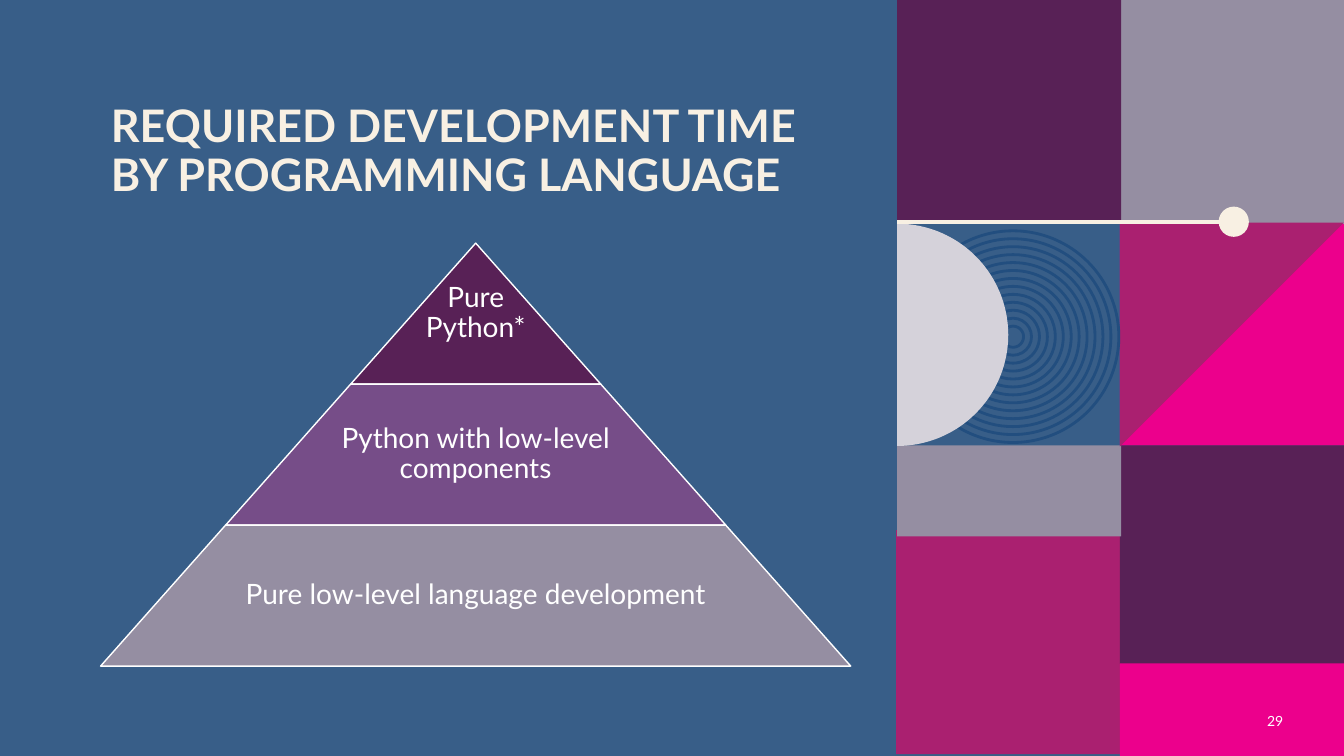
"""Build the slide on required development time by programming language."""
from math import cos, pi, sin

from lxml.etree import SubElement
from pptx import Presentation
from pptx.dml.color import RGBColor
from pptx.enum.shapes import MSO_CONNECTOR, MSO_SHAPE
from pptx.enum.text import MSO_ANCHOR, MSO_AUTO_SIZE, PP_ALIGN
from pptx.oxml.ns import qn
from pptx.util import Pt

BLUE = RGBColor(0x38, 0x5E, 0x88)
DEEP_BLUE = RGBColor(0x22, 0x4E, 0x7F)
PLUM = RGBColor(0x58, 0x21, 0x56)
VIOLET = RGBColor(0x76, 0x4D, 0x88)
MAUVE = RGBColor(0x95, 0x8E, 0xA2)
PALE = RGBColor(0xD5, 0xD2, 0xDA)
BERRY = RGBColor(0xAA, 0x20, 0x70)
PINK = RGBColor(0xEC, 0x00, 0x8C)
CREAM = RGBColor(0xF8, 0xF0, 0xE3)
WHITE = RGBColor(0xFF, 0xFF, 0xFF)
FONT = "Lato"

TITLE = "REQUIRED DEVELOPMENT TIME BY PROGRAMMING LANGUAGE"
PAGE = "29"
LEVELS = [
    ("Pure\nPython*", PLUM, 178.6),
    ("Python with low-level components", VIOLET, 232),
    ("Pure low-level language development", MAUVE, 348),
]
TILES = [
    (800, 158.4, 160, PINK),
    (800, 0, 160, MAUVE),
    (640.8, -0.5, 160, PLUM),
    (640.1, 378.7, 160, BERRY),
    (800, 318.2, 156, PLUM),
    (800, 473.8, 66.2, PINK),
    (640.8, 318.2, 65, MAUVE),
]
TILE_W = 160
APEX_X, APEX_Y, LEVEL_W, LEVEL_H = 339.8, 173.7, 178.6, 100.7
RING_X, RING_Y, RING_D, RING_STEP, RINGS = 723.6, 240.5, 151.2, 11.34, 13
DISC_X, DISC_Y, DISC_R, DISC_STEPS = 640.8, 239.2, 79.4, 90
RULE_Y, RULE_END, DOT_D = 158.4, 881.3, 21.6


def paint(sp, fill=None, line=None, width=1):
    sp.shadow.inherit = False
    if fill is None:
        sp.fill.background()
    else:
        sp.fill.solid()
        sp.fill.fore_color.rgb = fill
    if line is None:
        sp.line.fill.background()
    else:
        sp.line.color.rgb = line
        sp.line.width = Pt(width)


def add_shape(s, kind, x, y, w, h, *style):
    sp = s.shapes.add_shape(kind, Pt(x), Pt(y), Pt(w), Pt(h))
    paint(sp, *style)
    return sp


def add_outline(s, points, fill):
    points = [(Pt(x), Pt(y)) for x, y in points]
    builder = s.shapes.build_freeform(*points[0])
    builder.add_line_segments(points[1:], close=True)
    paint(builder.convert_to_shape(), fill)


def write(tf, text, size, color, align, anchor, spacing=None, bold=False):
    tf.word_wrap = True
    tf.auto_size = MSO_AUTO_SIZE.NONE
    tf.vertical_anchor = anchor
    p = tf.paragraphs[0]
    p.text = text
    p.alignment = align
    p.line_spacing = spacing
    for r in p.runs:
        r.font.name = FONT
        r.font.size = Pt(size)
        r.font.bold = bold
        r.font.color.rgb = color


def add_text(s, x, y, w, h, text, size, align, spacing=None, inset=None):
    tf = s.shapes.add_textbox(Pt(x), Pt(y), Pt(w), Pt(h)).text_frame
    if inset is not None:
        tf.margin_left = tf.margin_right = Pt(inset)
        tf.margin_top = tf.margin_bottom = Pt(inset)
    write(tf, text, size, WHITE, align, MSO_ANCHOR.MIDDLE, spacing)


def add_tiles(s):
    for x, y, h, color in TILES:
        add_shape(s, MSO_SHAPE.RECTANGLE, x, y, TILE_W, h, color)
    add_outline(s, [(960, 159), (800, 319), (800, 159)], BERRY)


def add_rings(s):
    for i in range(RINGS):
        d = RING_D - i * RING_STEP
        add_shape(s, MSO_SHAPE.OVAL, RING_X - d / 2, RING_Y - d / 2, d, d,
                  None, DEEP_BLUE, 2)
    angles = [pi * i / DISC_STEPS - pi / 2 for i in range(DISC_STEPS + 1)]
    add_outline(s, [(DISC_X + DISC_R * cos(a), DISC_Y + DISC_R * sin(a))
                    for a in angles], PALE)


def add_rule(s):
    rule = s.shapes.add_connector(MSO_CONNECTOR.STRAIGHT, Pt(DISC_X),
                                  Pt(RULE_Y), Pt(RULE_END), Pt(RULE_Y))
    rule.line.color.rgb = CREAM
    rule.line.width = Pt(3)
    SubElement(rule._element.spPr, qn("a:effectLst"))
    add_shape(s, MSO_SHAPE.OVAL, RULE_END - DOT_D / 2, RULE_Y - DOT_D / 2,
              DOT_D, DOT_D, CREAM)


def add_pyramid(s):
    for i, (text, color, text_w) in enumerate(LEVELS):
        w = LEVEL_W * (i + 1)
        y = APEX_Y + i * LEVEL_H
        sp = add_shape(s, MSO_SHAPE.TRAPEZOID, APEX_X - w / 2, y, w, LEVEL_H,
                       color, WHITE)
        sp.adjustments[0] = LEVEL_W / 2 / LEVEL_H
        add_text(s, APEX_X - text_w / 2, y, text_w, LEVEL_H, text, 20,
                 PP_ALIGN.CENTER, 0.9, 2)


def main():
    prs = Presentation()
    prs.slide_width, prs.slide_height = Pt(960), Pt(540)
    s = prs.slides.add_slide(prs.slide_layouts[5])
    s.background.fill.solid()
    s.background.fill.fore_color.rgb = BLUE
    title = s.shapes.title
    title.left, title.top = Pt(72), Pt(70.6)
    title.width, title.height = Pt(535.7), Pt(104.4)
    write(title.text_frame, TITLE, 32, CREAM, PP_ALIGN.LEFT, MSO_ANCHOR.TOP,
          0.9, True)
    add_tiles(s)
    add_rings(s)
    add_rule(s)
    add_pyramid(s)
    add_text(s, 887.8, 500.4, 36, 28.8, PAGE, 10, PP_ALIGN.RIGHT)
    prs.save("out.pptx")


if __name__ == "__main__":
    main()
